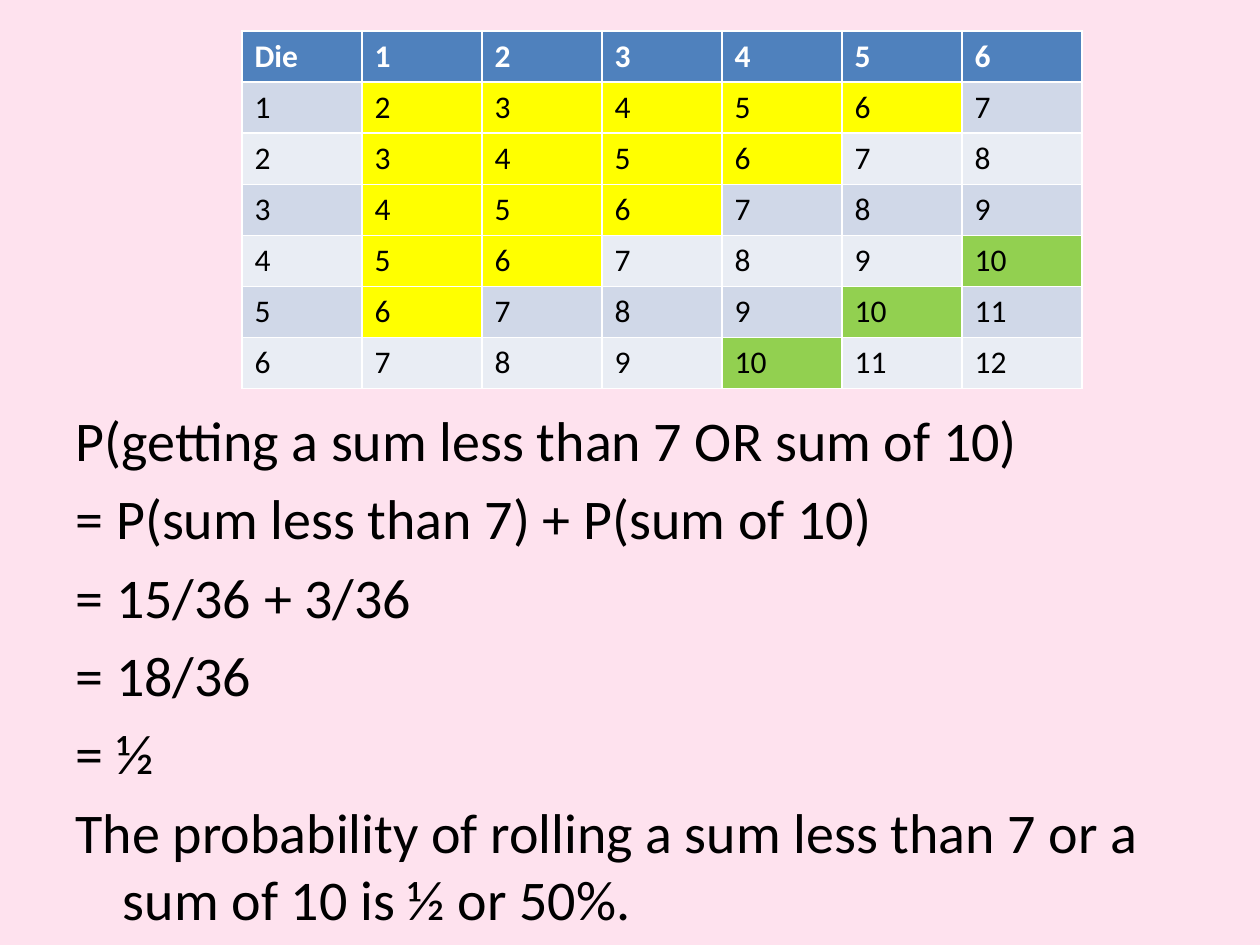
"""Build a slide on the probability of two dice sums."""
import pptx
import pptx.dml.color
import pptx.enum.text
import pptx.util
from lxml import etree

SCALE = 914400 / 126
FACES = range(1, 7)
HEADER = ["Die", *FACES]
ROWS = [[die, *(die + face for face in FACES)] for die in FACES]
LINES = [
    "P(getting a sum less than 7 OR sum of 10)",
    "= P(sum less than 7) + P(sum of 10)",
    "= 15/36 + 3/36",
    "= 18/36",
    "= ½",
    "The probability of rolling a sum less than 7 or a sum of 10 is ½ or 50%.",
]
TABLE_BOX = (242, 31, 840, 357)
BODY_BOX = (63, 399, 1134, 504)
BANDS = ("E9EDF4", "D0D8E8")


def px(n):
    return pptx.util.Emu(round(n * SCALE))


def color(value):
    return pptx.dml.color.RGBColor.from_string(value)


def format_run(r, size, value, bold=False):
    r.font.name = "Calibri"
    r.font.size = pptx.util.Pt(size)
    r.font.bold = bold
    r.font.color.rgb = color(value)


def cell_fill(row, col, value):
    if row == 0:
        return "4F81BD"
    if col and value < 7:
        return "FFFF00"
    if col and value == 10:
        return "92D050"
    return BANDS[row % 2]


def add_sums(s):
    grid = [HEADER, *ROWS]
    left, top, width, height = TABLE_BOX
    table = s.shapes.add_table(len(grid), len(HEADER), *map(px, TABLE_BOX)).table
    for column in table.columns:
        column.width = px(width / len(HEADER))
    for row in table.rows:
        row.height = px(height / len(grid))
    for i, values in enumerate(grid):
        for j, value in enumerate(values):
            cell = table.cell(i, j)
            cell.text = str(value)
            cell.fill.solid()
            cell.fill.fore_color.rgb = color(cell_fill(i, j, value))
            r = cell.text_frame.paragraphs[0].runs[0]
            format_run(r, 18, "000000" if i else "FFFFFF", bold=i == 0)


def fill_body(sp):
    sp.left, sp.top, sp.width, sp.height = map(px, BODY_BOX)
    tf = sp.text_frame
    tf.text = "\n".join(LINES)
    tf.auto_size = pptx.enum.text.MSO_AUTO_SIZE.NONE
    for p in tf.paragraphs:
        pPr = p._p.get_or_add_pPr()
        etree.SubElement(pPr, pptx.oxml.ns.qn("a:buNone"))
        format_run(p.runs[0], 32, "000000")


def main():
    prs = pptx.Presentation()
    prs.slide_width, prs.slide_height = px(1260), px(945)
    s = prs.slides.add_slide(prs.slide_layouts[1])
    s.background.fill.solid()
    s.background.fill.fore_color.rgb = color("FEE2EE")
    title = s.shapes.title.element
    title.getparent().remove(title)
    fill_body(s.placeholders[1])
    add_sums(s)
    prs.save("out.pptx")


if __name__ == "__main__":
    main()
